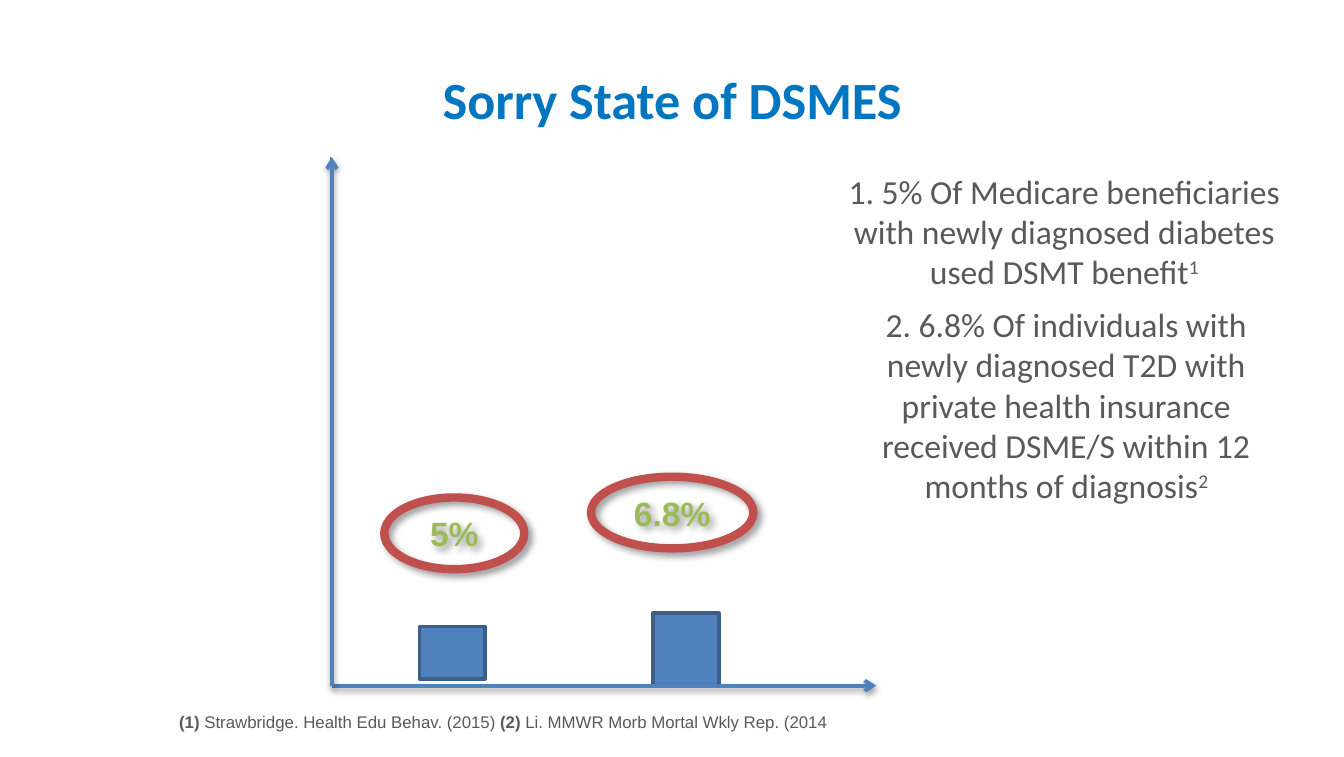
"""Build the slide on the low uptake of diabetes self-management education."""
from lxml import etree
from pptx import Presentation
from pptx.dml.color import RGBColor
from pptx.enum.shapes import MSO_CONNECTOR, MSO_SHAPE
from pptx.enum.text import MSO_ANCHOR, PP_ALIGN
from pptx.oxml import parse_xml
from pptx.oxml.ns import nsdecls, qn
from pptx.util import Pt

LEFT, CENTER = PP_ALIGN.LEFT, PP_ALIGN.CENTER
TOP, MIDDLE = MSO_ANCHOR.TOP, MSO_ANCHOR.MIDDLE
RECT, OVAL = MSO_SHAPE.RECTANGLE, MSO_SHAPE.OVAL
LINE = MSO_CONNECTOR.STRAIGHT

THEME = {
    "title": ("Calibri", 28, RGBColor.from_string("0076C0")),
    "body": ("Calibri", 18, RGBColor.from_string("595959")),
    "note": ("Arial", 9, RGBColor.from_string("595959")),
    "value": ("Arial", 18, RGBColor.from_string("9BBB59")),
    "bar": RGBColor.from_string("4F81BD"),
    "edge": RGBColor.from_string("3A5F8C"),
    "ring": RGBColor.from_string("C0504D"),
    "thin": RGBColor.from_string("4B7EBC"),
}


def write(shape, runs, style, align=CENTER, anchor=TOP):
    """Fill a shape with runs, each a text and a mark: bold, super or none."""
    name, size, color = THEME[style]
    frame = shape.text_frame
    frame.word_wrap = True
    frame.vertical_anchor = anchor
    frame.margin_left = frame.margin_right = Pt(6)
    frame.margin_top = frame.margin_bottom = Pt(3)
    para = frame.paragraphs[0]
    para.alignment = align
    for text, mark in runs:
        run = para.add_run()
        run.text = text
        font = run.font
        font.name, font.size, font.bold = name, Pt(size), mark == "bold"
        font.color.rgb = color
        if mark == "super":
            run._r.get_or_add_rPr().set("baseline", "30000")


def shade(shape, blur=0, dist=0, angle=0, alpha=0):
    """Give a shape a soft black shadow, or none at all when blur is zero."""
    props = shape._element.spPr
    for old in props.findall(qn("a:effectLst")):
        props.remove(old)
    inner = (
        f'<a:outerShdw blurRad="{Pt(blur)}" dist="{Pt(dist)}" dir="{angle * 60000}" '
        f'rotWithShape="0"><a:srgbClr val="000000"><a:alpha val="{alpha * 1000}"/>'
        "</a:srgbClr></a:outerShdw>"
    ) if blur else ""
    props.append(parse_xml(f'<a:effectLst {nsdecls("a")}>{inner}</a:effectLst>'))


deck = Presentation()
deck.slide_width, deck.slide_height = Pt(720), Pt(405.38)
slide = deck.slides.add_slide(deck.slide_layouts[6])
shapes = slide.shapes

texts = [
    ((90, 378, 540, 16.5), "note", LEFT, [
        ("(1) ", "bold"), ("Strawbridge. Health Edu Behav. (2015) ", ""),
        ("(2) ", "bold"), ("Li. MMWR Morb Mortal Wkly Rep. (2014", "")]),
    ((110, 32.8, 500, 35.5), "title", CENTER, [("Sorry State of DSMES", "bold")]),
    ((448.5, 88.3, 243.4, 70.5), "body", CENTER, [
        ("1. 5% Of Medicare beneficiaries with newly diagnosed diabetes "
         "used DSMT benefit", ""), ("1", "super")]),
    ((448.5, 159.7, 245.5, 114.5), "body", CENTER, [
        ("2. 6.8% Of individuals with newly diagnosed T2D with private health "
         "insurance received DSME/S within 12 months of diagnosis", ""),
        ("2", "super")]),
]
for box, style, align, runs in texts:
    write(shapes.add_textbox(*map(Pt, box)), runs, style, align)

rings = [("5%", 205.9, 266.4, 75), ("6.8%", 316.6, 255.3, 87)]
for label, x, y, wide in rings:
    ring = shapes.add_shape(OVAL, Pt(x), Pt(y), Pt(wide), Pt(38.4))
    ring.fill.background()
    ring.line.color.rgb = THEME["ring"]
    ring.line.width = Pt(4.5)
    shade(ring, 4, 3, 45, 40)
    write(ring, [(label, "bold")], "value", CENTER, MIDDLE)

bars = [(224.8, 335.5, 28), (349.9, 328.4, 38.8)]
for x, y, high in bars:
    bar = shapes.add_shape(RECT, Pt(x), Pt(y), Pt(35.2), Pt(high))
    bar.fill.solid()
    bar.fill.fore_color.rgb = THEME["bar"]
    bar.line.color.rgb = THEME["edge"]
    bar.line.width = Pt(2)
    shade(bar)

base = (177.8, 367.2)
axes = [
    ((177.2, 84.2), "thin", 0.75, False),
    ((469.5, 367.2), "bar", 2, True),
    ((177.8, 84.2), "bar", 2, True),
]
for end, color, width, arrow in axes:
    axis = shapes.add_connector(LINE, *map(Pt, base + end))
    axis.line.color.rgb = THEME[color]
    axis.line.width = Pt(width)
    if arrow:
        etree.SubElement(axis.line._get_or_add_ln(), qn("a:tailEnd"), type="arrow")
        shade(axis, 3.1, 1.6, 90, 38)
    else:
        shade(axis)

deck.save("out.pptx")
